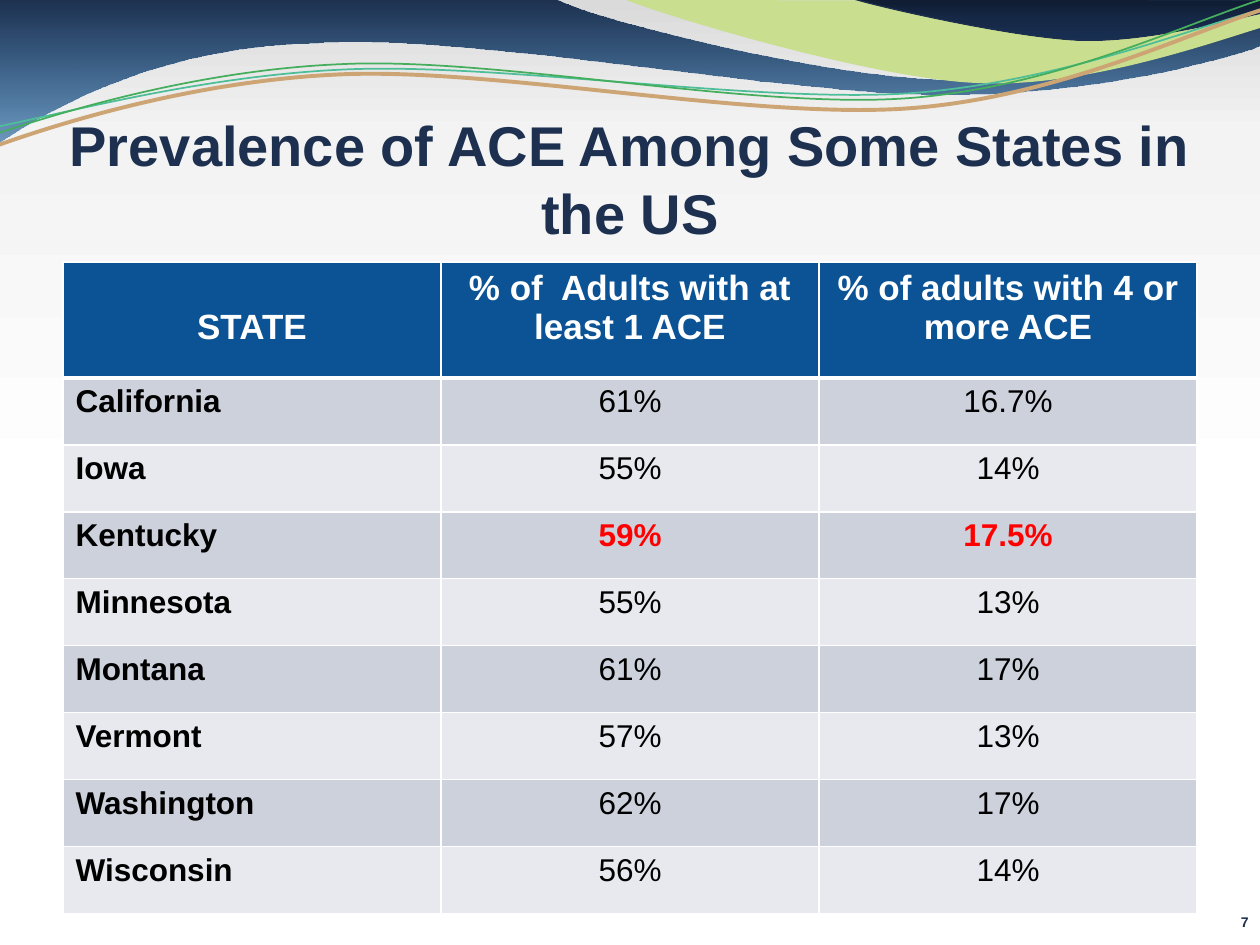
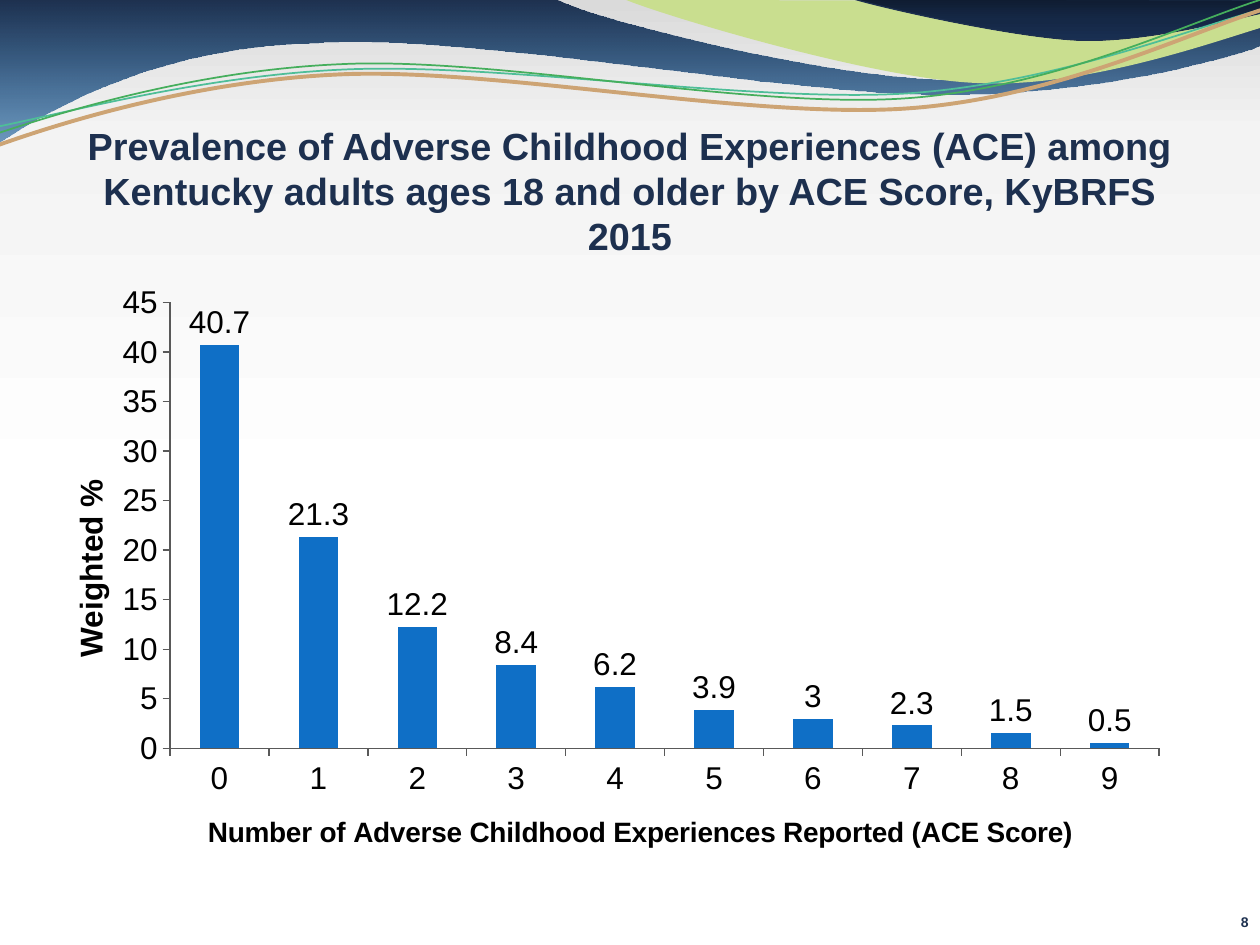
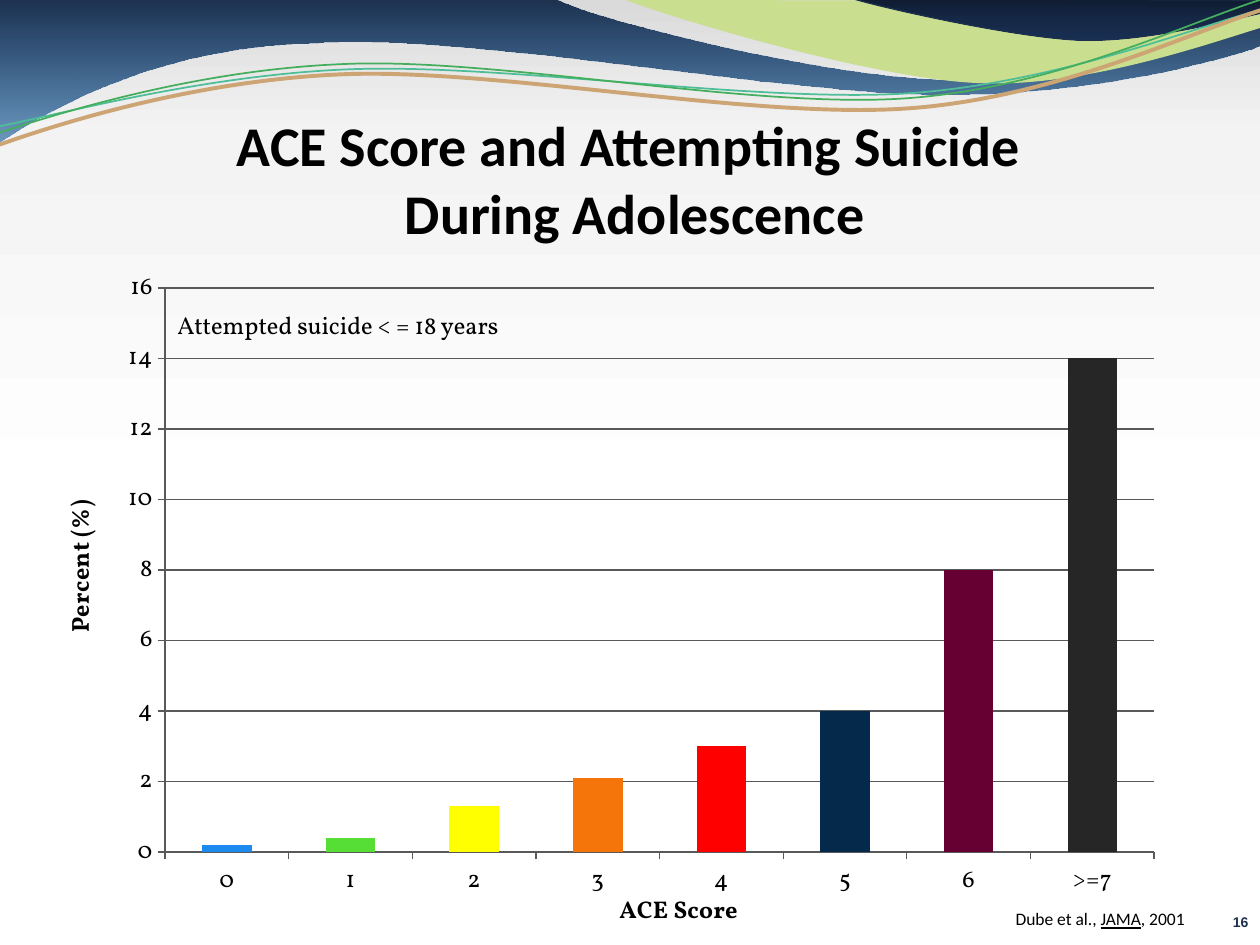
"""Build three slides on adverse childhood experiences, sharing one wavy master."""
from dataclasses import dataclass
from math import cos, radians, sin
from typing import NamedTuple, Optional

from lxml.etree import SubElement
from pptx import Presentation
from pptx.chart.data import CategoryChartData
from pptx.dml.color import RGBColor
from pptx.enum.chart import XL_CHART_TYPE, XL_LABEL_POSITION
from pptx.enum.text import MSO_ANCHOR, MSO_AUTO_SIZE, PP_ALIGN
from pptx.oxml import parse_xml
from pptx.oxml.ns import nsdecls, qn
from pptx.util import Inches, Pt

NAVY = RGBColor(0x1D, 0x30, 0x4F)
DEEP = RGBColor(0x0F, 0x1C, 0x31)
MID = RGBColor(0x15, 0x28, 0x46)
DUSK = RGBColor(0x19, 0x2F, 0x53)
SEA = RGBColor(0x00, 0x4C, 0x90)
LIME = RGBColor(0xC9, 0xDE, 0x8F)
TEAL = RGBColor(0x4E, 0xBE, 0x98)
TAN = RGBColor(0xCD, 0xA4, 0x74)
GREEN = RGBColor(0x45, 0xAE, 0x5C)
WHITE = RGBColor(0xFF, 0xFF, 0xFF)
PALE = RGBColor(0xF3, 0xF3, 0xF3)
SILVER = RGBColor(0xDA, 0xDA, 0xDA)
BLACK = RGBColor(0x00, 0x00, 0x00)
RED = RGBColor(0xFF, 0x00, 0x00)
GREY = RGBColor(0x59, 0x59, 0x59)
HEAD = RGBColor(0x0B, 0x53, 0x94)
BANDS = (RGBColor(0xCC, 0xD1, 0xDC), RGBColor(0xE7, 0xE9, 0xEE))
BLUE = RGBColor(0x0F, 0x6F, 0xC6)
RAMP = (
    RGBColor(0x1D, 0x8A, 0xEF), RGBColor(0x56, 0xDE, 0x36),
    RGBColor(0xFF, 0xFF, 0x00), RGBColor(0xF5, 0x75, 0x0B),
    RED, RGBColor(0x05, 0x29, 0x4A),
    RGBColor(0x66, 0x00, 0x33), RGBColor(0x26, 0x26, 0x26),
)
SANS, HUMAN, SERIF = "Arial", "Calibri", "Vollkorn"
TILT = 357.3


class Stop(NamedTuple):
    """One gradient stop, in percent."""
    at: int
    color: RGBColor
    alpha: int = 100


class Box(NamedTuple):
    """A frame in inches."""
    left: float
    top: float
    width: float
    height: float

    def inches(self) -> tuple:
        return tuple(Inches(side) for side in self)


@dataclass
class Wave:
    """A curved outline: six numbers make a curve, two make a line."""
    start: tuple
    steps: tuple
    fill: object = None
    line: Optional[RGBColor] = None
    weight: float = 1
    pivot: Optional[tuple] = None


@dataclass
class Label:
    """An axis title with its place in the chart, in inches."""
    text: str
    place: tuple
    size: float


@dataclass
class Bars:
    """A column chart."""
    box: Box
    names: tuple
    values: tuple
    top: int
    unit: int
    font: str
    size: float
    plot: Box
    across: Label
    upward: Label
    ramp: tuple = ()
    grid: bool = False
    tags: bool = False


WAVES = (
    Wave((0, 0), (
        (4.4, -0.01), (4.76, 0.17, 6.64, 0.63, 7.58, 0.63),
        (8.53, 0.63, 9.58, 0.26, 10, 0.09), (10.01, 0.36),
        (9.83, 0.44, 8.7, 0.76, 7.46, 0.75),
        (6.22, 0.75, 3.82, 0.28, 2.57, 0.34),
        (1.29, 0.36, 0.46, 0.83, -0.01, 1.13), (0, 0)),
        fill=(Stop(0, NAVY), Stop(100, SEA, 55))),
    Wave((4.97, 0), (
        (5.26, 0.12, 6.93, 0.63, 7.77, 0.66),
        (8.61, 0.7, 9.64, 0.33, 10.01, 0.22), (10.01, 0.01), (4.97, 0)), fill=LIME),
    Wave((6.77, -0.01), (
        (6.96, 0.05, 8.04, 0.3, 8.59, 0.32),
        (9.13, 0.33, 9.79, 0.15, 10.03, 0.1), (10.03, 0), (6.77, -0.01)),
        fill=(Stop(0, DEEP), Stop(50, MID), Stop(100, DUSK)),
        line=NAVY, weight=0.75),
    Wave((-0.15, 1.03), (
        (0.33, 0.95, 1.53, 0.6, 2.76, 0.55),
        (3.99, 0.5, 6, 0.82, 7.22, 0.74),
        (8.45, 0.65, 9.53, 0.19, 10.14, 0.04)), line=TEAL, pivot=(4.99, 0.58)),
    Wave((-0.12, 1.19), (
        (0.37, 1.01, 1.5, 0.64, 2.72, 0.59),
        (3.95, 0.54, 5.97, 0.95, 7.21, 0.86),
        (8.45, 0.77, 9.53, 0.21, 10.14, 0.04)),
        line=TAN, weight=2.25, pivot=(5.01, 0.64)),
    Wave((-0.14, 1.1), (
        (0.36, 0.93, 1.49, 0.56, 2.71, 0.51),
        (3.93, 0.45, 5.96, 0.87, 7.2, 0.78),
        (8.44, 0.69, 9.52, 0.13, 10.13, -0.04)), line=GREEN, pivot=(5, 0.56)),
)

HEADS = ("STATE", "% of  Adults with at least 1 ACE", "% of adults with 4 or more ACE")
STATES = (
    ("California", "61%", "16.7%"),
    ("Iowa", "55%", "14%"),
    ("Kentucky", "59%", "17.5%"),
    ("Minnesota", "55%", "13%"),
    ("Montana", "61%", "17%"),
    ("Vermont", "57%", "13%"),
    ("Washington", "62%", "17%"),
    ("Wisconsin", "56%", "14%"),
)

SCORES = Bars(
    Box(0.42, 2.17, 9, 4.75), tuple("0123456789"),
    (40.7, 21.3, 12.2, 8.4, 6.2, 3.9, 3, 2.3, 1.5, 0.5),
    45, 5, SANS, 18, Box(0.93, 0.23, 7.85, 3.54),
    Label("Number of Adverse Childhood Experiences Reported (ACE Score)",
          (1.19, 4.25), 16),
    Label("Weighted %", (0.09, 1.59), 18), tags=True)

TRIES = Bars(
    Box(0.42, 2.01, 9.25, 5.42), (*"0123456", ">=7"),
    (0.2, 0.4, 1.3, 2.1, 3, 4, 8, 14),
    16, 2, SERIF, 14, Box(0.89, 0.28, 7.85, 4.55),
    Label("ACE Score", (4.46, 5.12), 14),
    Label("Percent (%)", (0.04, 1.97), 14), ramp=RAMP, grid=True)


def write(frame, *lines: str, size: float, font: str = SANS, color: RGBColor = BLACK,
          bold: bool = False, align=PP_ALIGN.LEFT, mark: str = "") -> None:
    """Write each line as a paragraph, underlining the marked word."""
    for index, line in enumerate(lines):
        para = frame.add_paragraph() if index else frame.paragraphs[0]
        para.alignment = align
        for part in line.partition(mark) if mark else (line,):
            run = para.add_run()
            run.text = part
            run.font.size, run.font.name, run.font.bold = Pt(size), font, bold
            run.font.color.rgb = color
            if mark:
                run.font.underline = part == mark


def blend(fill, stops: tuple, angle: int) -> None:
    """Give a fill a linear gradient, its angle clockwise."""
    fill.gradient()
    grad = fill._xPr.find(qn("a:gradFill"))
    group = grad.find(qn("a:gsLst"))
    for old in list(group):
        group.remove(old)
    for stop in stops:
        node = SubElement(group, qn("a:gs"), pos=str(stop.at * 1000))
        tint = SubElement(node, qn("a:srgbClr"), val=str(stop.color))
        if stop.alpha < 100:
            SubElement(tint, qn("a:alpha"), val=str(stop.alpha * 1000))
    grad.find(qn("a:lin")).set("ang", str(angle * 60000))


def trace(wave: Wave) -> list:
    """List the points of a wave, turned level about its pivot."""
    points = [wave.start]
    for step in wave.steps:
        points += zip(step[::2], step[1::2])
    if wave.pivot:
        left, top = wave.pivot
        turn = radians(360 - TILT)
        points = [(left + (x - left) * cos(turn) - (y - top) * sin(turn),
                   top + (x - left) * sin(turn) + (y - top) * cos(turn))
                  for x, y in points]
    return [(Inches(x), Inches(y)) for x, y in points]


def bend(shape, steps: tuple) -> None:
    """Join each three lines that stand for a curve into one."""
    lines = iter(list(shape._element.iter(qn("a:lnTo"))))
    for step in steps:
        curve = next(lines)
        if len(step) == 6:
            curve.tag = qn("a:cubicBezTo")
            for extra in (next(lines), next(lines)):
                curve.append(extra[0])
                extra.getparent().remove(extra)


def draw_wave(slide, wave: Wave):
    """Draw one wave and return its shape."""
    first, *rest = trace(wave)
    pen = slide.shapes.build_freeform(*first)
    pen.add_line_segments(rest, close=wave.fill is not None)
    shape = pen.convert_to_shape()
    bend(shape, wave.steps)
    shape.shadow.inherit = False
    if wave.pivot:
        shape.rotation = TILT
    if wave.fill is None:
        shape.fill.background()
    elif isinstance(wave.fill, RGBColor):
        shape.fill.solid()
        shape.fill.fore_color.rgb = wave.fill
    else:
        blend(shape.fill, wave.fill, 90)
    if wave.line is None:
        shape.line.fill.background()
    else:
        shape.line.color.rgb = wave.line
        shape.line.width = Pt(wave.weight)
    return shape


def dress(master, slide) -> None:
    """Set the master's backdrop and move the waves onto it."""
    stops = (Stop(47, WHITE), Stop(86, PALE), Stop(100, SILVER))
    blend(master.background.fill, stops, 270)
    for index, wave in enumerate(WAVES):
        node = draw_wave(slide, wave)._element
        node.nvSpPr.cNvPr.set("id", str(100 + index))
        master.shapes._spTree.insert(2 + index, node)


def fit(frame, edges: tuple) -> None:
    """Wrap a frame from its top, with the given margins."""
    frame.auto_size = MSO_AUTO_SIZE.NONE
    frame.word_wrap = True
    frame.vertical_anchor = MSO_ANCHOR.TOP
    (frame.margin_left, frame.margin_top,
     frame.margin_right, frame.margin_bottom) = (Inches(edge) for edge in edges)


def add_title(slide, box: Box, *lines: str, edges: tuple = (0, 0.05, 0, 0),
              **style) -> None:
    """Place and fill the title."""
    title = slide.shapes.title
    title.left, title.top, title.width, title.height = box.inches()
    fit(title.text_frame, edges)
    write(title.text_frame, *lines, bold=True, align=PP_ALIGN.CENTER, **style)


def add_text(slide, box: Box, text: str, edges: tuple = (0.1, 0.05, 0.1, 0.05),
             **style) -> None:
    """Add a text box."""
    frame = slide.shapes.add_textbox(*box.inches()).text_frame
    fit(frame, edges)
    write(frame, text, **style)


def edge(cell) -> None:
    """Give a header cell white borders, the lower one thick."""
    for index, (side, weight) in enumerate(zip("LRTB", (1, 1, 1, 3))):
        line = parse_xml(f'<a:ln{side} {nsdecls("a")} w="{Pt(weight)}"/>')
        SubElement(SubElement(line, qn("a:solidFill")), qn("a:srgbClr"), val=str(WHITE))
        cell._tc.get_or_add_tcPr().insert(index, line)


def add_states(slide, box: Box, head: float) -> None:
    """Add the table of states."""
    rows = (HEADS, *STATES)
    table = slide.shapes.add_table(len(rows), len(HEADS), *box.inches()).table
    for index, row in enumerate(rows):
        table.rows[index].height = Inches(
            (box.height - head) / len(STATES) if index else head)
        for place, text in enumerate(row):
            cell = table.cell(index, place)
            cell.fill.solid()
            cell.fill.fore_color.rgb = BANDS[(index - 1) % 2] if index else HEAD
            hot = row[0] == "Kentucky" and place > 0
            if not index:
                edge(cell)
                cell.margin_top = Inches(0.05 if place else 0.36)
            write(cell.text_frame, text, size=18 if index else 20,
                  color=RED if hot else BLACK if index else WHITE,
                  bold=not index or not place or hot,
                  align=PP_ALIGN.CENTER if place or not index else PP_ALIGN.LEFT)


def lay_out(node, place: tuple, box: Box, index: int) -> None:
    """Fix the place of a part in the box of its chart."""
    old = node.find(qn("c:layout"))
    if old is not None:
        node.remove(old)
    layout = parse_xml(f"<c:layout {nsdecls('c')}/>")
    manual = SubElement(layout, qn("c:manualLayout"))
    if len(place) == 4:
        SubElement(manual, qn("c:layoutTarget"), val="inner")
    for side in "xy":
        SubElement(manual, qn(f"c:{side}Mode"), val="edge")
    for side, length, whole in zip("xywh", place, box[2:] * 2):
        SubElement(manual, qn(f"c:{side}"), val=str(length / whole))
    node.insert(index, layout)


def style_axis(axis, label: Label, bars: Bars) -> None:
    """Format an axis and its title."""
    axis.format.line.color.rgb = GREY
    axis.format.line.width = Pt(0.75)
    font = axis.tick_labels.font
    font.size, font.name, font.color.rgb = Pt(bars.size), bars.font, BLACK
    write(axis.axis_title.text_frame, label.text, size=label.size,
          font=bars.font, bold=True)
    lay_out(axis.axis_title._element, label.place, bars.box, 1)


def add_bars(slide, bars: Bars) -> None:
    """Add a column chart."""
    data = CategoryChartData()
    data.categories = bars.names
    data.add_series("Series 1", bars.values)
    chart = slide.shapes.add_chart(
        XL_CHART_TYPE.COLUMN_CLUSTERED, *bars.box.inches(), data).chart
    chart.has_legend = chart.has_title = False
    chart.font.size, chart.font.name = Pt(bars.size), bars.font
    chart.font.color.rgb = BLACK
    lay_out(chart._chartSpace.chart.plotArea, bars.plot, bars.box, 0)
    style_axis(chart.category_axis, bars.across, bars)
    axis = chart.value_axis
    style_axis(axis, bars.upward, bars)
    axis.axis_title.text_frame._txBody.bodyPr.set("rot", "-5400000")
    axis.minimum_scale, axis.maximum_scale, axis.major_unit = 0, bars.top, bars.unit
    axis.has_major_gridlines = bars.grid
    if bars.grid:
        axis.major_gridlines.format.line.color.rgb = GREY
        axis.major_gridlines.format.line.width = Pt(0.75)
    plot = chart.plots[0]
    plot.gap_width, plot.vary_by_categories = 150, False
    series = plot.series[0]
    series.format.fill.solid()
    series.format.fill.fore_color.rgb = BLUE
    for index, color in enumerate(bars.ramp):
        fill = series.points[index].format.fill
        fill.solid()
        fill.fore_color.rgb = color
    if bars.tags:
        tags = series.data_labels
        tags.show_value, tags.position = True, XL_LABEL_POSITION.OUTSIDE_END
        tags.font.size, tags.font.name = Pt(bars.size), bars.font
        tags.font.color.rgb = BLACK


def main() -> None:
    """Build and save the deck."""
    deck = Presentation()
    deck.slide_width, deck.slide_height = Inches(10), Inches(7.5)
    slides = [deck.slides.add_slide(deck.slide_layouts[5]) for _ in range(3)]
    table, scores, tries = slides
    dress(deck.slide_master, table)
    for slide, number in zip(slides, (7, 8, 16)):
        add_text(slide, Box(0.08, 7.25, 9.83, 0.25), str(number), edges=(0, 0, 0, 0),
                 size=8, color=NAVY, bold=True, align=PP_ALIGN.RIGHT)

    add_title(table, Box(0.5, 0.83, 9, 1.42),
              "Prevalence of ACE Among Some States in the US", size=32, color=NAVY)
    add_states(table, Box(0.5, 2.08, 9, 5.17), 0.92)

    add_title(scores, Box(0.5, 0.92, 9, 0.92),
              "Prevalence of Adverse Childhood Experiences (ACE) among Kentucky "
              "adults ages 18 and older by ACE Score, KyBRFS 2015",
              size=21.6, color=NAVY)
    add_bars(scores, SCORES)

    add_title(tries, Box(0.58, 0.83, 8.92, 1.18), "ACE Score and Attempting Suicide ",
              "During Adolescence", edges=(0.1, 0.05, 0.1, 0.05), size=32, font=HUMAN)
    add_text(tries, Box(1.5, 7.16, 8, 0.27), "Dube et al., JAMA, 2001",
             size=10, font=HUMAN, align=PP_ALIGN.RIGHT, mark="JAMA")
    add_bars(tries, TRIES)
    add_text(tries, Box(1.31, 2.41, 3.71, 0.34), "Attempted suicide < = 18 years",
             size=14, font=SERIF)
    deck.save("out.pptx")


if __name__ == "__main__":
    main()
